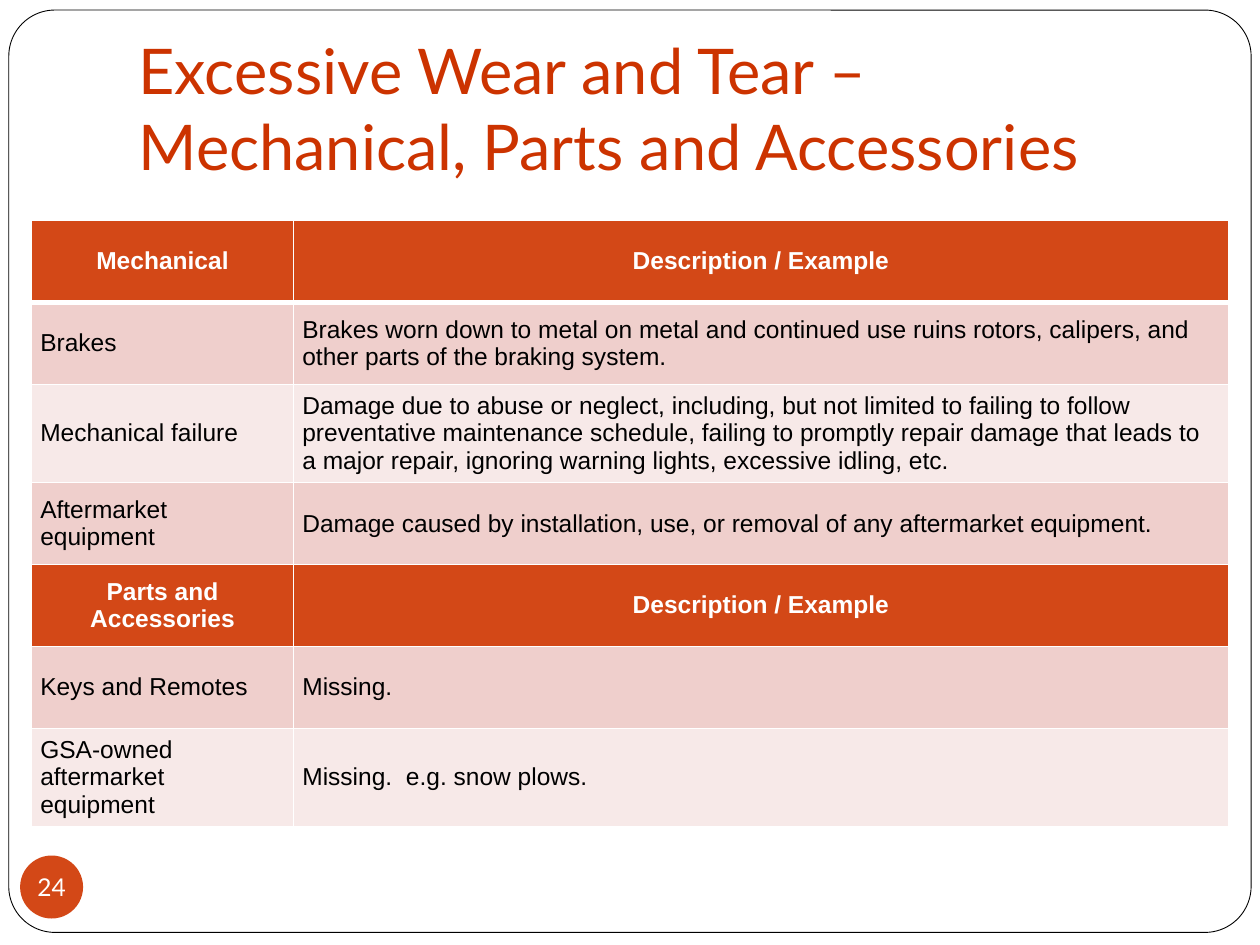
"""Build the slide on excessive wear and tear of vehicles."""
from lxml.etree import SubElement as Sub
from pptx import Presentation
from pptx.dml.color import RGBColor as RGB
from pptx.enum.shapes import MSO_SHAPE as Shape
from pptx.enum.text import MSO_ANCHOR as Anchor, PP_ALIGN as Align
from pptx.oxml.ns import qn
from pptx.util import Inches, Pt

TITLE = "Excessive Wear and Tear – Mechanical, Parts and Accessories"
PAGE = "24"
HEAD = "Description / Example"
PARTS = [
    ("Mechanical", [
        ("Brakes", "Brakes worn down to metal on metal and continued use ruins rotors, "
         "calipers, and other parts of the braking system."),
        ("Mechanical failure", "Damage due to abuse or neglect, including, but not limited to "
         "failing to follow preventative maintenance schedule, failing to promptly repair "
         "damage that leads to a major repair, ignoring warning lights, excessive idling, etc."),
        ("Aftermarket equipment", "Damage caused by installation, use, or removal of any "
         "aftermarket equipment."),
    ]),
    ("Parts and Accessories", [
        ("Keys and Remotes", "Missing."),
        ("GSA-owned aftermarket equipment", "Missing.  e.g. snow plows."),
    ]),
]
HUES = {"title": "CC3300", "head": "D34817", "odd": "EFCFCC", "even": "F7E9E8",
        "white": "FFFFFF", "black": "000000"}
WIDE, HIGH = 10, 7.5
COLS = (2.08, 7.42)
ROW, TALL = 0.65, 0.78


def paint(item, hue):
    item.fill.solid()
    item.fill.fore_color.rgb = RGB.from_string(HUES[hue])


def write(frame, text, size=14, font="Arial", hue="black", bold=False,
          align=Align.LEFT, anchor=Anchor.MIDDLE, pad=(0.07, 0, 0.07, 0), wrap=True):
    frame.text = text
    frame.word_wrap = wrap
    frame.vertical_anchor = anchor
    (frame.margin_left, frame.margin_top,
     frame.margin_right, frame.margin_bottom) = map(Inches, pad)
    para = frame.paragraphs[0]
    para.alignment = align
    face = para.runs[0].font
    face.size, face.name, face.bold = Pt(size), font, bold
    face.color.rgb = RGB.from_string(HUES[hue])


def edge(cell, low):
    props = cell._tc.get_or_add_tcPr()
    for spot, (side, width) in enumerate((("L", 1), ("R", 1), ("T", 1), ("B", low))):
        line = props.makeelement(qn(f"a:ln{side}"), {"w": str(Pt(width))})
        Sub(Sub(line, qn("a:solidFill")), qn("a:srgbClr"), val=HUES["white"])
        props.insert(spot, line)


def shape(slide, kind, box, hue):
    item = slide.shapes.add_shape(kind, *map(Inches, box))
    item.shadow.inherit = False
    paint(item, hue)
    return item


def grid(slide):
    rows = []
    for name, items in PARTS:
        rows.append((name, HEAD, "head"))
        rows += [(*item, "even" if i % 2 else "odd") for i, item in enumerate(items)]
    highs = [TALL if hue == "even" else ROW for *_, hue in rows]
    box = (WIDE - sum(COLS)) / 2, 1.75, sum(COLS), sum(highs)
    table = slide.shapes.add_table(len(rows), len(COLS), *map(Inches, box)).table
    for col, width in zip(table.columns, COLS):
        col.width = Inches(width)
    for r, (*texts, hue) in enumerate(rows):
        table.rows[r].height = Inches(highs[r])
        look = dict(hue="white", bold=True, align=Align.CENTER) if hue == "head" else {}
        for c, text in enumerate(texts):
            cell = table.cell(r, c)
            write(cell.text_frame, text, **look)
            cell.vertical_anchor = Anchor.MIDDLE
            (cell.margin_left, cell.margin_top,
             cell.margin_right, cell.margin_bottom) = map(Inches, (0.07, 0, 0.07, 0))
            paint(cell, hue)
            edge(cell, 1 if r else 3)


def main():
    deck = Presentation()
    deck.slide_width, deck.slide_height = Inches(WIDE), Inches(HIGH)
    slide = deck.slides.add_slide(deck.slide_layouts[5])

    rim = shape(slide, Shape.ROUNDED_RECTANGLE, (0.07, 0.08, 9.86, 7.32), "white")
    rim.adjustments[0] = 0.05
    rim.line.color.rgb = RGB.from_string(HUES["black"])
    rim.line.width = Pt(0.5)
    slide.shapes._spTree.insert(2, rim._element)

    title = slide.shapes.title
    title.left, title.top, title.width, title.height = map(Inches, (1, 0.3, 8.5, 1.25))
    write(title.text_frame, TITLE, size=36, font="Lato", hue="title",
          anchor=Anchor.BOTTOM, pad=(0.1, 0.05, 0.1, 0.1))

    dot = shape(slide, Shape.OVAL, (0.16, 6.79, 0.5, 0.5), "head")
    dot.line.fill.background()
    write(dot.text_frame, PAGE, font="Lato", hue="white", align=Align.CENTER,
          pad=(0, 0, 0, 0), wrap=False)
    grid(slide)
    deck.save("out.pptx")


if __name__ == "__main__":
    main()
